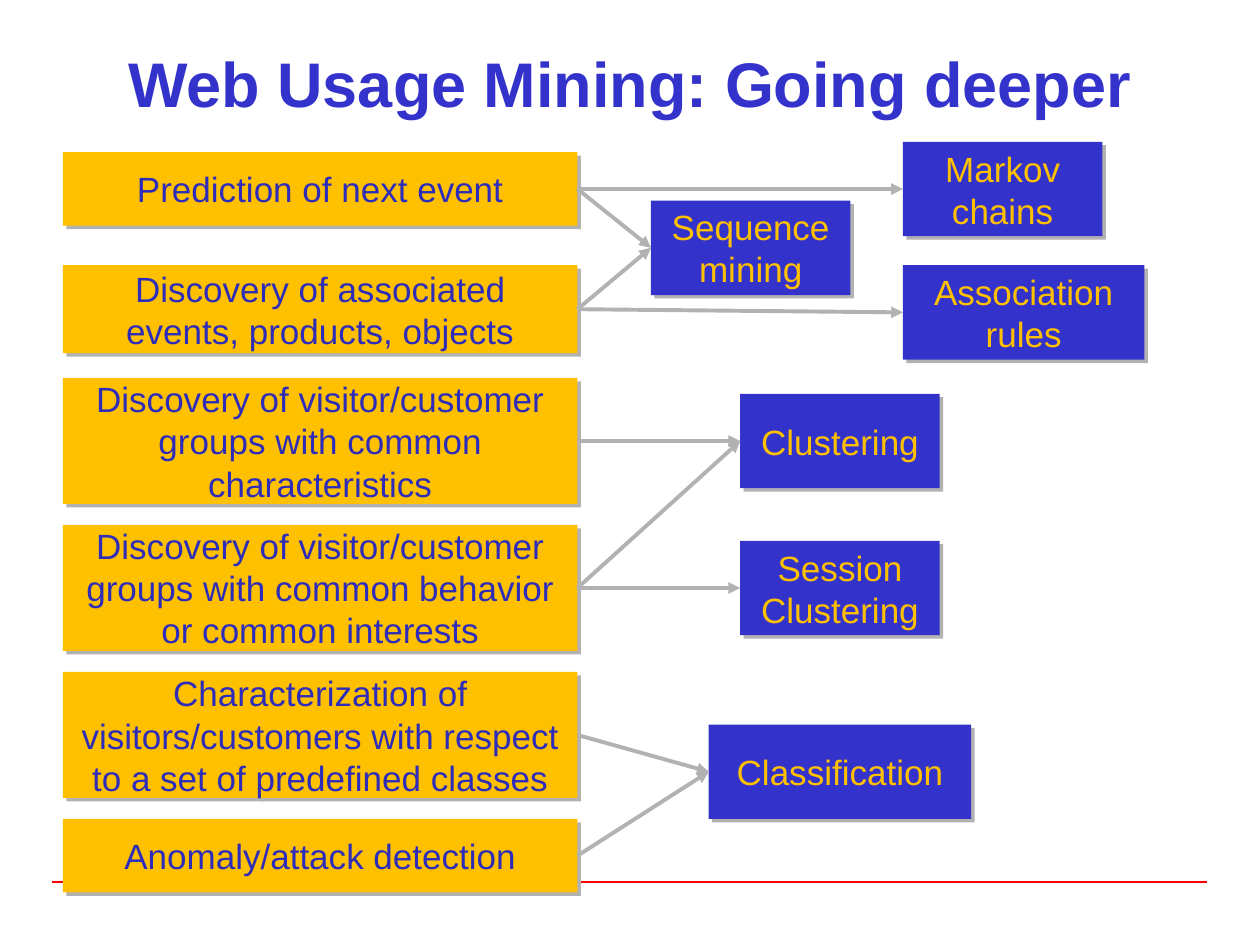
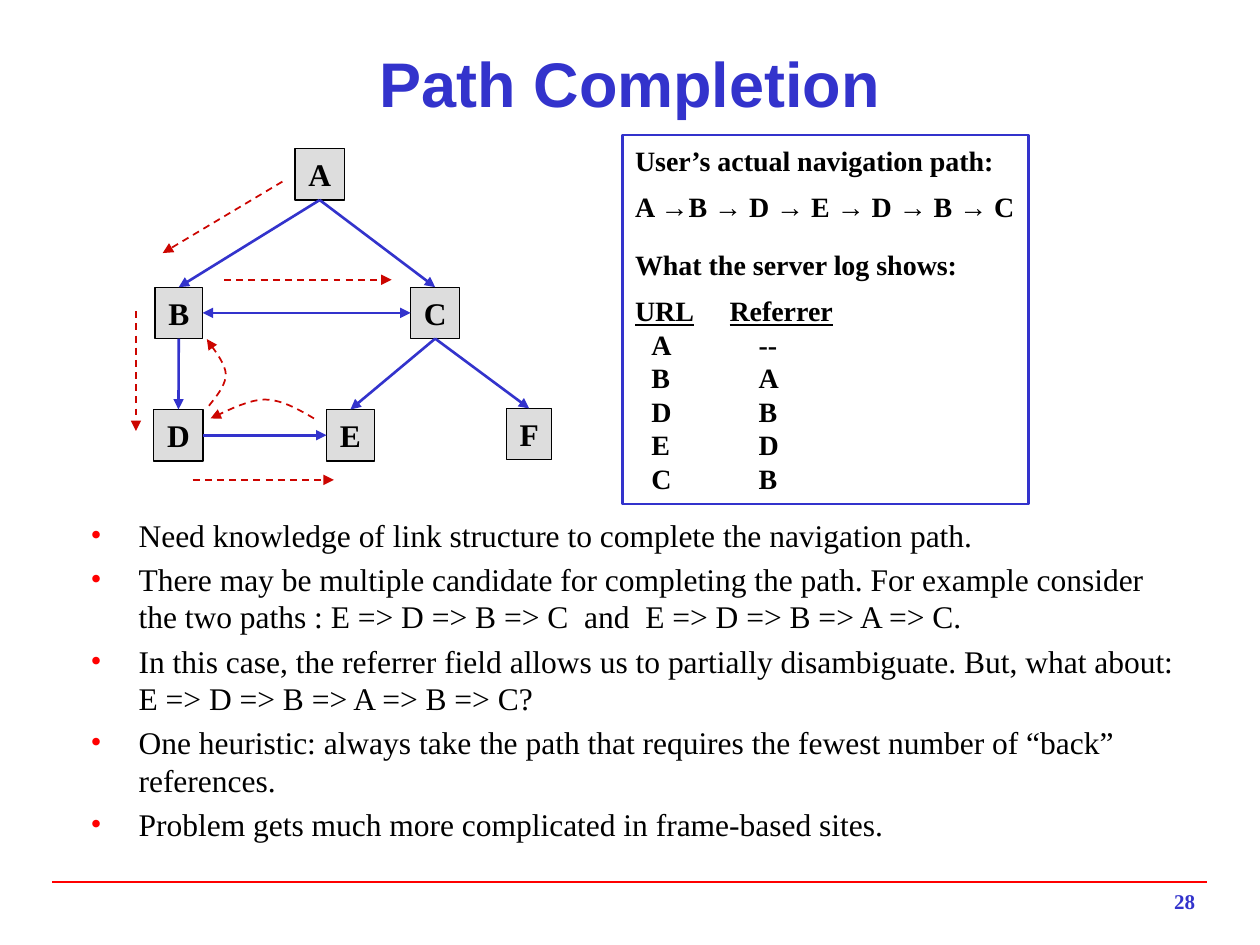
from typing import NamedTuple

from lxml.etree import SubElement
from pptx import Presentation
from pptx.dml.color import RGBColor
from pptx.enum.dml import MSO_LINE_DASH_STYLE as Dash
from pptx.enum.shapes import MSO_CONNECTOR as Connector, MSO_SHAPE as Preset
from pptx.enum.text import MSO_ANCHOR as Anchor, MSO_AUTO_SIZE as AutoSize, PP_ALIGN as Align
from pptx.oxml.ns import qn
from pptx.util import Inches, Pt

# Shared look: a grid of 240 columns by 180 rows covers the slide
CELL = Inches(1) / 24
COLUMNS, ROWS = 240, 180
SANS, SERIF = "Arial", "Times New Roman"
BLUE, DEEP_BLUE, GOLD = "3333CC", "2D2DB9", "FFC000"
RED, TRAIL_RED, BLACK = "FF0000", "CC0500", "000000"
GRAY, NODE_GRAY = "B2B2B2", "DDDDDD"
TOP, LEFT, BOTTOM, RIGHT = range(4)


class Area(NamedTuple):
    column: float
    row: float
    width: float
    height: float


class Font(NamedTuple):
    name: str
    size: float
    color: str
    bold: bool = False


class Stroke(NamedTuple):
    color: str
    width: float
    dashed: bool = False
    head: bool = False
    tail: bool = True


class Block(NamedTuple):
    label: str
    area: Area


class Link(NamedTuple):
    source: str
    target: str
    source_side: int = BOTTOM
    target_side: int = TOP
    two_way: bool = False


TITLE_FONT = Font(SANS, 36, BLUE, True)
PAGE_FONT = Font(SERIF, 12, BLUE, True)
LIST_FONT = Font(SERIF, 18, BLACK)
NODE_FONT = Font(SERIF, 18, BLACK, True)
LOG_FONT = Font(SERIF, 16, BLACK, True)
RULE = Stroke(RED, 1, tail=False)
TASK_LINK = Stroke(GRAY, 2.25)
SITE_LINK = Stroke(BLUE, 1.5)
TRAIL = Stroke(TRAIL_RED, 1, dashed=True)


def grid(*cells: float) -> list[int]:
    return [round(cell * CELL) for cell in cells]


def rgb(color: str) -> RGBColor:
    return RGBColor.from_string(color)


def add_run(paragraph, text: str, font: Font, underline: bool = False) -> None:
    run = paragraph.add_run()
    run.text = text
    run.font.name, run.font.size, run.font.bold = font.name, Pt(font.size), font.bold
    run.font.color.rgb = rgb(font.color)
    if underline:
        run.font.underline = True


def style_line(shape, stroke: Stroke) -> None:
    shape.line.color.rgb = rgb(stroke.color)
    shape.line.width = Pt(stroke.width)
    if stroke.dashed:
        shape.line.dash_style = Dash.DASH
    outline = shape.line._get_or_add_ln()
    for tag, wanted in (("a:headEnd", stroke.head), ("a:tailEnd", stroke.tail)):
        if wanted:
            SubElement(outline, qn(tag), type="triangle")


def add_line(slide, start: tuple, end: tuple, stroke: Stroke):
    line = slide.shapes.add_connector(Connector.STRAIGHT, *grid(*start, *end))
    style_line(line, stroke)
    SubElement(line._element.spPr, qn("a:effectLst"))
    return line


def join(slide, shapes: dict, link: Link, stroke: Stroke) -> None:
    line = add_line(slide, (0, 0), (1, 1), stroke._replace(head=link.two_way))
    line.begin_connect(shapes[link.source], link.source_side)
    line.end_connect(shapes[link.target], link.target_side)


def add_box(slide, area: Area, fill: str | None = None):
    box = slide.shapes.add_shape(Preset.RECTANGLE, *grid(*area))
    box.shadow.inherit = False
    if fill:
        box.fill.solid()
        box.fill.fore_color.rgb = rgb(fill)
    else:
        box.fill.background()
    box.text_frame.vertical_anchor = Anchor.MIDDLE
    return box


def add_block(slide, block: Block, fill: str, text_color: str):
    box = add_box(slide, block.area, fill)
    box.line.fill.background()
    effects = box._element.spPr.find(qn("a:effectLst"))
    shadow = SubElement(effects, qn("a:outerShdw"), blurRad="0", dist=str(Pt(2.8)),
                        dir=str(45 * 60000), algn="ctr", rotWithShape="0")
    SubElement(shadow, qn("a:srgbClr"), val=GRAY)
    frame = box.text_frame
    frame.word_wrap = True
    frame.margin_top = frame.margin_bottom = 0
    frame.paragraphs[0].alignment = Align.CENTER
    add_run(frame.paragraphs[0], block.label, Font(SANS, 20, text_color))
    return box


def place(shape, area: Area) -> None:
    shape.left, shape.top, shape.width, shape.height = grid(*area)
    shape.text_frame.auto_size = AutoSize.NONE
    shape.text_frame.word_wrap = True


def start_slide(deck, layout: int, heading: str):
    slide = deck.slides.add_slide(deck.slide_layouts[layout])
    add_line(slide, (10, 168), (230, 168), RULE)
    title = slide.shapes.title
    place(title, Area(12, 7.6, 216, 16))
    title.text_frame.vertical_anchor = Anchor.MIDDLE
    paragraph = title.text_frame.paragraphs[0]
    paragraph.alignment = Align.CENTER
    add_run(paragraph, heading, TITLE_FONT)
    return slide


# Slide 1: mining tasks and the methods that serve them
def task(label: str, row: float, height: float) -> Block:
    return Block(label, Area(12, row, 98, height))


def method(label: str, column: float, row: float, width: float = 38) -> Block:
    return Block(label, Area(column, row, width, 18))


METHODS = [
    method("Sequence mining", 124, 38.2),
    method("Markov chains", 172, 27),
    method("Association rules", 172, 50.5, 46),
    method("Clustering", 141, 75),
    method("Session Clustering", 141, 103),
    method("Classification", 135, 138, 50),
]
TASKS = [
    task("Prediction of next event", 29, 14),
    task("Discovery of associated events, products, objects", 50.5, 16.8),
    task("Discovery of visitor/customer groups with common characteristics", 72, 24),
    task("Discovery of visitor/customer groups with common behavior or common interests", 100, 24),
    task("Characterization of visitors/customers with respect to a set of predefined classes", 128, 24),
    task("Anomaly/attack detection", 156, 14),
]
# Methods used by each task, in the order of TASKS
USES = [
    ("Markov chains", "Sequence mining"),
    ("Sequence mining", "Association rules"),
    ("Clustering",),
    ("Clustering", "Session Clustering"),
    ("Classification",),
    ("Classification",),
]


def build_usage_mining(deck) -> None:
    slide = start_slide(deck, 5, "Web Usage Mining: Going deeper")
    shapes = {block.label: add_block(slide, block, BLUE, GOLD) for block in METHODS}
    shapes |= {block.label: add_block(slide, block, GOLD, DEEP_BLUE) for block in TASKS}
    for block, targets in zip(TASKS, USES):
        for target in targets:
            join(slide, shapes, Link(block.label, target, RIGHT, LEFT), TASK_LINK)


# Slide 2: site graph, server log and remarks
PAGES = [
    Block("A", Area(56.2, 28.3, 9.4, 9.8)),
    Block("B", Area(29.5, 54.7, 9.1, 9.8)),
    Block("C", Area(78.2, 54.7, 9.4, 9.8)),
    Block("D", Area(29.3, 78, 9.4, 9.8)),
    Block("E", Area(62.2, 78, 9.1, 9.8)),
    Block("F", Area(96.5, 77.8, 8.6, 9.8)),
]
SITE_LINKS = [
    Link("A", "B"), Link("A", "C"), Link("B", "D"), Link("C", "E"), Link("C", "F"),
    Link("D", "E", RIGHT, LEFT), Link("B", "C", RIGHT, LEFT, two_way=True),
]
STRAIGHT_TRAILS = [
    ((53.8, 34.6), (31, 48.2)),
    ((25.9, 59.3), (25.9, 82.1)),
    ((36.7, 91.4), (63.6, 91.4)),
    ((42.7, 53.3), (74.6, 53.3)),
]
# Each curve: a start, then two control points and an end per Bézier piece
CURVED_TRAILS = [
    [(59.8, 79.7), (56.6, 77.8), (53.5, 76.1), (50.4, 76.1), (47, 76.1), (41.8, 79), (40.1, 79.7)],
    [(39.8, 77.3), (41.3, 75.4), (43, 73.4), (43, 71.3), (43, 69.1), (40.1, 65.8), (39.4, 64.6)],
]
LOG = [("A", "--"), ("B", "A"), ("D", "B"), ("E", "D"), ("C", "B")]
REMARKS = [
    "Need knowledge of link structure to complete the navigation path.",
    "There may be multiple candidate for completing the path. For example consider the two paths : "
    "E => D => B => C  and  E => D => B => A => C.",
    "In this case, the referrer field allows us to partially disambiguate. But, what about: "
    "E => D => B => A => B => C?",
    "One heuristic: always take the path that requires the fewest number of “back” references.",
    "Problem gets much more complicated in frame-based sites.",
]


def add_curve(slide, points: list, stroke: Stroke, steps: int = 10) -> None:
    track = []
    for first in range(0, len(points) - 1, 3):
        corners = points[first:first + 4]
        for step in range(1, steps + 1):
            t = step / steps
            weights = ((1 - t) ** 3, 3 * t * (1 - t) ** 2, 3 * t * t * (1 - t), t ** 3)
            track.append(grid(*(sum(w * c[axis] for w, c in zip(weights, corners)) for axis in (0, 1))))
    builder = slide.shapes.build_freeform(*grid(*points[0]))
    builder.add_line_segments(track, close=False)
    curve = builder.convert_to_shape()
    curve.shadow.inherit = False
    curve.fill.background()
    style_line(curve, stroke)


def set_tabs(paragraph, *inches: float) -> None:
    stops = SubElement(paragraph._p.get_or_add_pPr(), qn("a:tabLst"))
    for stop in inches:
        SubElement(stops, qn("a:tab"), pos=str(Inches(stop)), algn="l")


def add_log(slide) -> None:
    panel = add_box(slide, Area(118.6, 25.7, 77.3, 70.3))
    style_line(panel, Stroke(BLUE, 1.5, tail=False))
    frame = panel.text_frame
    frame.word_wrap = False

    def new_line(gap: float = 0):
        paragraph = frame.add_paragraph() if gap is not None else frame.paragraphs[0]
        paragraph.alignment = Align.LEFT
        paragraph.space_before = Pt(gap or 0)
        return paragraph

    add_run(new_line(None), "User’s actual navigation path:", LOG_FONT)
    route = new_line(7)
    for piece in ("A ", "→", "B ", "→ ", "D ", "→", " E ", "→", " D ", "→", " B ", "→", " C"):
        add_run(route, piece, LOG_FONT._replace(bold="→" not in piece))
    add_run(new_line(14), "What the server log shows:", LOG_FONT)
    header = new_line(7)
    set_tabs(header, 0.75)
    for piece in ("URL", "\t", "Referrer"):
        add_run(header, piece, LOG_FONT, underline=piece != "\t")
    for url, referrer in LOG:
        entry = new_line()
        set_tabs(entry, 0.13, 0.98)
        add_run(entry, f"\t{url}\t{referrer}", LOG_FONT)


def add_remarks(slide) -> None:
    body = slide.placeholders[1]
    place(body, Area(12, 97, 216, 64.3))
    frame = body.text_frame
    for number, remark in enumerate(REMARKS):
        paragraph = frame.add_paragraph() if number else frame.paragraphs[0]
        paragraph.space_before = Pt(3.6)
        properties = paragraph._p.get_or_add_pPr()
        properties.set("marL", str(Inches(0.5)))
        properties.set("indent", str(Inches(-0.38)))
        SubElement(SubElement(properties, qn("a:buClr")), qn("a:srgbClr"), val=RED)
        SubElement(properties, qn("a:buFont"), typeface=SERIF)
        SubElement(properties, qn("a:buChar"), char="•")
        add_run(paragraph, remark, LIST_FONT)


def add_page_number(slide, number: str) -> None:
    label = slide.shapes.add_textbox(*grid(180, 168, 50, 8))
    label.text_frame.word_wrap = True
    label.text_frame.paragraphs[0].alignment = Align.RIGHT
    add_run(label.text_frame.paragraphs[0], number, PAGE_FONT)


def build_path_completion(deck) -> None:
    slide = start_slide(deck, 1, "Path Completion")
    add_page_number(slide, "28")
    add_remarks(slide)
    add_log(slide)
    shapes = {}
    for page in PAGES:
        node = shapes[page.label] = add_box(slide, page.area, NODE_GRAY)
        style_line(node, Stroke(BLACK, 0.75, tail=False))
        node.text_frame.word_wrap = False
        node.text_frame.paragraphs[0].alignment = Align.CENTER
        add_run(node.text_frame.paragraphs[0], page.label, NODE_FONT)
    for link in SITE_LINKS:
        join(slide, shapes, link, SITE_LINK)
    for start, end in STRAIGHT_TRAILS:
        add_line(slide, start, end, TRAIL)
    for points in CURVED_TRAILS:
        add_curve(slide, points, TRAIL)


def main() -> None:
    deck = Presentation()
    deck.slide_width, deck.slide_height = grid(COLUMNS, ROWS)
    build_usage_mining(deck)
    build_path_completion(deck)
    deck.save("out.pptx")


if __name__ == "__main__":
    main()
